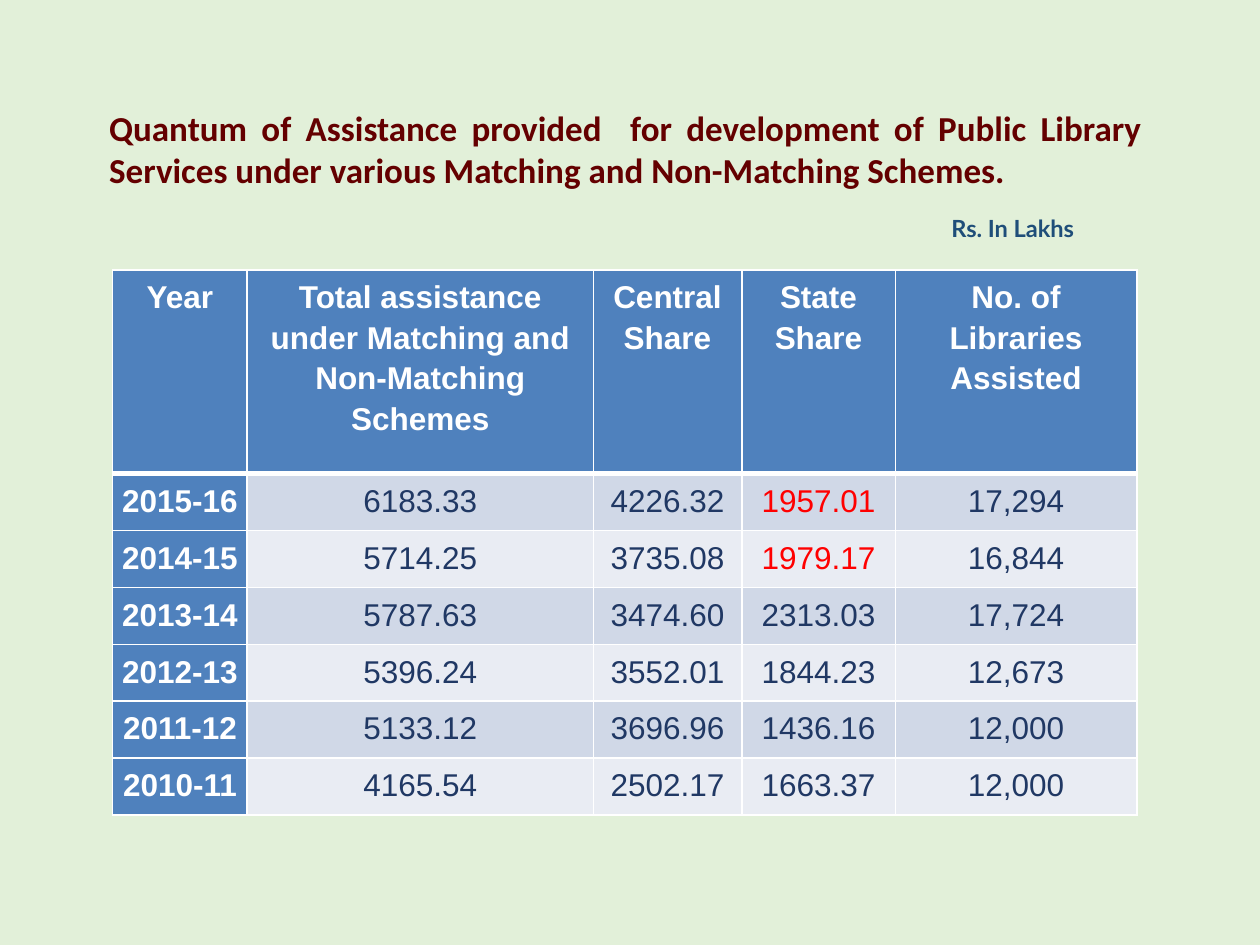
from dataclasses import dataclass

from lxml.etree import SubElement
from pptx import Presentation
from pptx.dml.color import RGBColor
from pptx.enum.text import MSO_ANCHOR, MSO_AUTO_SIZE, PP_ALIGN
from pptx.oxml.ns import qn
from pptx.util import Cm, Pt


@dataclass(frozen=True)
class Theme:
    background: str = "E2F0D9"
    title: str = "640000"
    unit: str = "1F4E79"
    header: str = "4F81BD"
    bands: tuple = ("D0D8E7", "E9ECF3")
    white: str = "FFFFFF"
    figure: str = "203864"
    highlight: str = "FF0000"
    title_font: str = "Calibri"
    unit_font: str = "Lato"
    table_font: str = "Arial"
    title_size: float = 20
    unit_size: float = 13.5
    table_size: float = 18
    thin_line: float = 0.96
    thick_line: float = 3


THEME = Theme()

TITLE = ("Quantum of Assistance provided  for development of Public Library "
         "Services under various Matching and Non-Matching Schemes.")
ASSISTANCE = [
    ("Year", "Total assistance under Matching and Non-Matching Schemes",
     "Central Share", "State Share", "No. of Libraries Assisted"),
    ("2015-16", "6183.33", "4226.32", "1957.01", "17,294"),
    ("2014-15", "5714.25", "3735.08", "1979.17", "16,844"),
    ("2013-14", "5787.63", "3474.60", "2313.03", "17,724"),
    ("2012-13", "5396.24", "3552.01", "1844.23", "12,673"),
    ("2011-12", "5133.12", "3696.96", "1436.16", "12,000"),
    ("2010-11", "4165.54", "2502.17", "1663.37", "12,000"),
]
COLUMN_SHARES = (1.07, 2.75, 1.18, 1.22, 1.92)
HIGHLIGHTED = {(1, 3), (2, 3)}  # row, column of the red figures
HEADER_HEIGHT = 4.11


def write_text(frame, text, *, font, size, color, bold=False,
               align=PP_ALIGN.CENTER, spacing=None):
    paragraph = frame.paragraphs[0]
    paragraph.alignment = align
    paragraph.line_spacing = spacing
    run = paragraph.add_run()
    run.text = text
    run.font.name = font
    run.font.size = Pt(size)
    run.font.bold = bold
    run.font.color.rgb = RGBColor.from_string(color)


def set_margins(target, horizontal, vertical):
    target.margin_left = target.margin_right = Cm(horizontal)
    target.margin_top = target.margin_bottom = Cm(vertical)


def set_borders(cell, **widths):
    """Draw white lines; the schema wants left, right, top, bottom."""
    properties = cell._tc.get_or_add_tcPr()
    for side in ("L", "R", "T", "B"):
        width = widths.get(side, THEME.thin_line)
        line = SubElement(properties, qn(f"a:ln{side}"), w=str(Pt(width)))
        fill = SubElement(line, qn("a:solidFill"))
        SubElement(fill, qn("a:srgbClr"), val=THEME.white)


def set_pentagon(shape, point):
    """Give a placeholder the outline of a pentagon arrow."""
    geometry = SubElement(shape._element.spPr, qn("a:prstGeom"), prst="homePlate")
    adjustments = SubElement(geometry, qn("a:avLst"))
    SubElement(adjustments, qn("a:gd"), name="adj",
               fmla=f"val {round(point * 100000)}")


def place_title(slide, left, top, width, height):
    title = slide.shapes.title
    title.left, title.top = Cm(left), Cm(top)
    title.width, title.height = Cm(width), Cm(height)
    set_pentagon(title, 0.27)
    frame = title.text_frame
    frame.word_wrap = True
    frame.auto_size = MSO_AUTO_SIZE.NONE
    frame.vertical_anchor = MSO_ANCHOR.BOTTOM
    set_margins(frame, 0.18, 0.1)
    write_text(frame, TITLE, font=THEME.title_font, size=THEME.title_size,
               color=THEME.title, bold=True, align=PP_ALIGN.JUSTIFY)


def place_unit(slide, left, top, width, height):
    box = slide.shapes.add_textbox(Cm(left), Cm(top), Cm(width), Cm(height))
    frame = box.text_frame
    frame.word_wrap = False
    set_margins(frame, 0.18, 0.1)
    write_text(frame, "Rs. In Lakhs", font=THEME.unit_font,
               size=THEME.unit_size, color=THEME.unit, bold=True, spacing=1.15)


def format_cell(cell, text, row, column):
    heading = row == 0 or column == 0
    if heading:
        fill, color = THEME.header, THEME.white
    else:
        fill = THEME.bands[(row - 1) % 2]
        color = THEME.highlight if (row, column) in HIGHLIGHTED else THEME.figure
    # A thick line parts the header from the figures
    thick_side = {0: "B", 1: "T"}.get(row)
    set_borders(cell, **({thick_side: THEME.thick_line} if thick_side else {}))
    cell.fill.solid()
    cell.fill.fore_color.rgb = RGBColor.from_string(fill)
    set_margins(cell, 0.15, 0.1)
    write_text(cell.text_frame, text, font=THEME.table_font,
               size=THEME.table_size, color=color, bold=heading, spacing=1.15)


def place_table(slide, left, top, width, height):
    table = slide.shapes.add_table(
        len(ASSISTANCE), len(COLUMN_SHARES),
        Cm(left), Cm(top), Cm(width), Cm(height)).table
    table.first_col = True
    for column, share in zip(table.columns, COLUMN_SHARES):
        column.width = Cm(width * share / sum(COLUMN_SHARES))
    body_height = (height - HEADER_HEIGHT) / (len(ASSISTANCE) - 1)
    for row, texts in enumerate(ASSISTANCE):
        table.rows[row].height = Cm(body_height if row else HEADER_HEIGHT)
        for column, text in enumerate(texts):
            format_cell(table.cell(row, column), text, row, column)


def main():
    presentation = Presentation()
    presentation.slide_width, presentation.slide_height = Cm(25.4), Cm(19.05)
    slide = presentation.slides.add_slide(presentation.slide_layouts[5])
    slide.background.fill.solid()
    slide.background.fill.fore_color.rgb = RGBColor.from_string(THEME.background)

    place_title(slide, 2.02, 1.86, 21.18, 2.08)
    place_table(slide, 2.27, 5.44, 20.65, 10.99)
    place_unit(slide, 18.75, 4.13, 3.33, 0.76)
    presentation.save("out.pptx")


if __name__ == "__main__":
    main()
